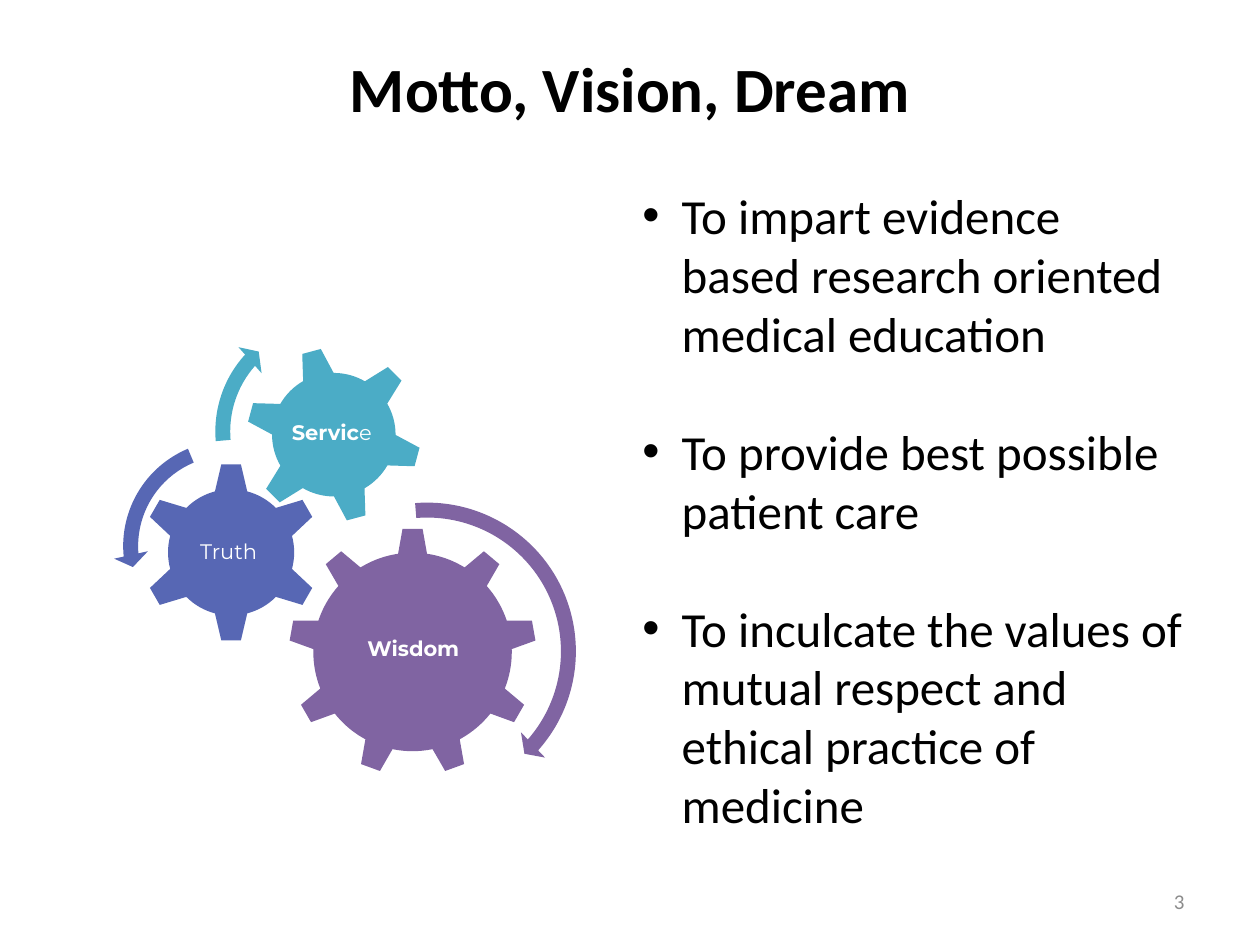
import pptx
import pptx.dml.color
import pptx.enum.shapes
import pptx.enum.text
import pptx.oxml.ns
import pptx.util
from lxml import etree

Pt = pptx.util.Pt
SHAPE = pptx.enum.shapes.MSO_SHAPE
ALIGN = pptx.enum.text.PP_ALIGN
ANCHOR = pptx.enum.text.MSO_ANCHOR
PURPLE, BLUE, TEAL = "8064A2", "5767B4", "4BACC6"
BLACK, WHITE, GRAY = "000000", "FFFFFF", "8C8C8C"


def color(value):
    return pptx.dml.color.RGBColor.from_string(value)


class Slide:
    body_font = "Calibri"
    label_font = "Montserrat"

    def __init__(self, prs):
        self.s = prs.slides.add_slide(prs.slide_layouts[5])

    def run(self, p, text, size, fill, font=body_font, bold=False):
        r = p.add_run()
        r.text = text
        r.font.name = font
        r.font.size = Pt(size)
        r.font.bold = bold
        r.font.color.rgb = color(fill)

    def title(self, text, x, y, w, h):
        sp = self.s.shapes.title
        sp.left, sp.top, sp.width, sp.height = Pt(x), Pt(y), Pt(w), Pt(h)
        tf = sp.text_frame
        tf.vertical_anchor = ANCHOR.MIDDLE
        p = tf.paragraphs[0]
        p.alignment = ALIGN.CENTER
        self.run(p, text, 36, BLACK, bold=True)

    def text_box(self, x, y, w, h, anchor=ANCHOR.MIDDLE):
        tf = self.s.shapes.add_textbox(Pt(x), Pt(y), Pt(w), Pt(h)).text_frame
        tf.word_wrap = True
        tf.vertical_anchor = anchor
        return tf

    def shape(self, kind, x, y, size, fill, rotation=0, adjustments=()):
        sp = self.s.shapes.add_shape(kind, Pt(x), Pt(y), Pt(size), Pt(size))
        sp.shadow.inherit = False
        sp.fill.solid()
        sp.fill.fore_color.rgb = color(fill)
        sp.line.fill.background()
        sp.rotation = rotation
        for i, value in enumerate(adjustments):
            sp.adjustments[i] = value

    def label(self, runs, x, y, w, h):
        tf = self.text_box(x, y, w, h)
        tf.margin_left = tf.margin_right = Pt(1.2)
        tf.margin_top = tf.margin_bottom = Pt(1.2)
        p = tf.paragraphs[0]
        p.alignment = ALIGN.CENTER
        p.line_spacing = 0.9
        for text, bold in runs:
            self.run(p, text, 12, WHITE, self.label_font, bold)

    def bullets(self, items, x, y, w, h):
        tf = self.text_box(x, y, w, h, ANCHOR.TOP)
        indent = Pt(22.5)
        for i, text in enumerate(items):
            p = tf.add_paragraph() if i else tf.paragraphs[0]
            p.line_spacing = Pt(33.7)
            p.space_before = Pt(33.7 if i else 0)
            pPr = p._p.get_or_add_pPr()
            pPr.set("marL", str(indent))
            pPr.set("indent", str(-indent))
            etree.SubElement(pPr, pptx.oxml.ns.qn("a:buFont")).set("typeface", "Arial")
            etree.SubElement(pPr, pptx.oxml.ns.qn("a:buChar")).set("char", "•")
            self.run(p, text, 28, BLACK)

    def number(self, text, x, y, w, h):
        p = self.text_box(x, y, w, h).paragraphs[0]
        p.alignment = ALIGN.RIGHT
        self.run(p, text, 12, GRAY)


def main():
    prs = pptx.Presentation()
    prs.slide_width, prs.slide_height = Pt(720), Pt(540)
    slide = Slide(prs)
    slide.title("Motto, Vision, Dream", 36, 21.6, 648, 56.2)

    gears = [
        (SHAPE.GEAR_9, 164.9, 301.7, 141.8, PURPLE, 0,
         [("Wisdom", True)], (193.7, 334.8, 85, 72.7)),
        (SHAPE.GEAR_6, 80.6, 264.2, 103, BLUE, 0,
         [("Truth ", False)], (106.6, 290.2, 51.1, 51.1)),
        (SHAPE.GEAR_6, 140.4, 198, 100.8, TEAL, 345,
         [("Servic", True), ("e ", False)], (162.7, 219.6, 56.9, 56.9)),
    ]
    for kind, x, y, size, fill, rotation, runs, box in gears:
        slide.shape(kind, x, y, size, fill, rotation)
        slide.label(runs, *box)

    arrows = [
        (SHAPE.CIRCULAR_ARROW, 153.4, 281.5, 181.4, PURPLE,
         (0.047, 2.99, 24.892, 159.206, 0.055)),
        (SHAPE.LEFT_CIRCULAR_ARROW, 64.8, 246.2, 131.8, BLUE,
         (0.065, 4.3, 104.891, 148.378, 0.075)),
        (SHAPE.CIRCULAR_ARROW, 117.4, 175.7, 141.8, TEAL,
         (0.06, 3.941, 133.138, 105.082, 0.07)),
    ]
    for kind, x, y, size, fill, adjustments in arrows:
        slide.shape(kind, x, y, size, fill, adjustments=adjustments)

    slide.bullets([
        "To impart evidence based research oriented medical education",
        "To provide best possible patient care",
        "To inculcate the values of mutual respect and ethical practice of medicine",
    ], 360, 102.2, 324, 414.7)
    slide.number("3", 516, 500.5, 168, 28.8)
    prs.save("out.pptx")


if __name__ == "__main__":
    main()
